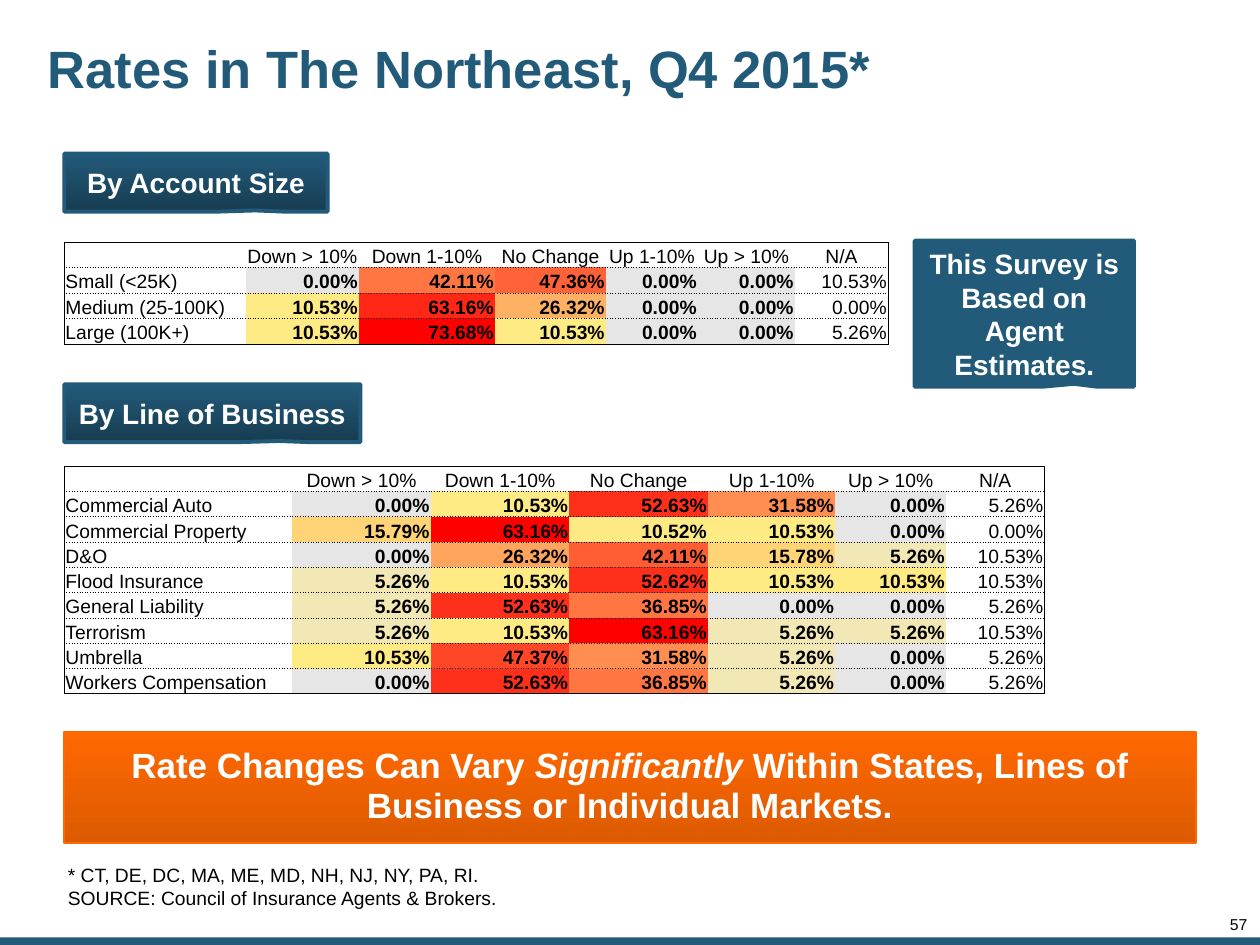
from lxml.etree import SubElement
from pptx import Presentation
from pptx.dml.color import RGBColor
from pptx.enum.shapes import MSO_SHAPE as Shape
from pptx.enum.text import MSO_ANCHOR as Anchor, PP_ALIGN as Align
from pptx.oxml.ns import qn
from pptx.util import Inches, Pt

BLUE, DARK_BLUE, ORANGE, DARK_ORANGE = "225A7A", "173C51", "FF6801", "DC5A01"
BLACK, WHITE = "000000", "FFFFFF"
HEADINGS = ["", "Down > 10%", "Down 1-10%", "No Change", "Up 1-10%", "Up > 10%", "N/A"]
SHARED_HEAT = {"0.00%": "E7E6E6", "5.26%": "F2E8B6", "10.53%": "FFEB84"}

ACCOUNT_WIDTHS = [1.44, 0.9, 1.08, 0.88, 0.73, 0.77, 0.74]
ACCOUNT_RATES = [
    ["Small (<25K)", "0.00%", "42.11%", "47.36%", "0.00%", "0.00%", "10.53%"],
    ["Medium (25-100K)", "10.53%", "63.16%", "26.32%", "0.00%", "0.00%", "0.00%"],
    ["Large (100K+)", "10.53%", "73.68%", "10.53%", "0.00%", "0.00%", "5.26%"],
]
ACCOUNT_HEAT = SHARED_HEAT | {
    "26.32%": "FFB163", "42.11%": "FF7642", "47.36%": "FF6238",
    "63.16%": "FF2816", "73.68%": "FF0000",
}

BUSINESS_WIDTHS = [1.81, 1.1, 1.1, 1.1, 1.01, 0.88, 0.78]
BUSINESS_RATES = [
    ["Commercial Auto", "0.00%", "10.53%", "52.63%", "31.58%", "0.00%", "5.26%"],
    ["Commercial Property", "15.79%", "63.16%", "10.52%", "10.53%", "0.00%", "0.00%"],
    ["D&O", "0.00%", "26.32%", "42.11%", "15.78%", "5.26%", "10.53%"],
    ["Flood Insurance", "5.26%", "10.53%", "52.62%", "10.53%", "10.53%", "10.53%"],
    ["General Liability", "5.26%", "52.63%", "36.85%", "0.00%", "0.00%", "5.26%"],
    ["Terrorism", "5.26%", "10.53%", "63.16%", "5.26%", "5.26%", "10.53%"],
    ["Umbrella", "10.53%", "47.37%", "31.58%", "5.26%", "0.00%", "5.26%"],
    ["Workers Compensation", "0.00%", "52.63%", "36.85%", "5.26%", "0.00%", "5.26%"],
]
BUSINESS_HEAT = SHARED_HEAT | {
    "10.52%": "FEEA85", "15.78%": "FFD477", "15.79%": "FFD477", "26.32%": "FFA55D",
    "31.58%": "FF8E50", "36.85%": "FF7642", "42.11%": "FF5E35", "47.37%": "FF4728",
    "52.62%": "FF301B", "52.63%": "FF301B", "63.16%": "FF0000",
}


def rgb(hex_color):
    """Turn a hex string into a colour."""
    return RGBColor.from_string(hex_color)


def set_format(target, values):
    """Set each named attribute on the target."""
    for name, value in values.items():
        setattr(target, name, value)


def write(paragraph, runs, size, color, bold=False, align=Align.LEFT, spacing=None):
    """Fill a paragraph with (text, italic) runs."""
    set_format(paragraph, {"alignment": align, "line_spacing": spacing})
    for text, italic in runs:
        run = paragraph.add_run()
        run.text = text
        set_format(run.font, {"name": "Arial", "size": Pt(size), "bold": bold, "italic": italic})
        run.font.color.rgb = rgb(color)


def set_frame(frame, insets, anchor):
    """Wrap a text frame and set its insets (left, top, right, bottom) and anchor."""
    sides = ("margin_left", "margin_top", "margin_right", "margin_bottom")
    margins = dict(zip(sides, map(Inches, insets)))
    set_format(frame, {"word_wrap": True, "vertical_anchor": anchor} | margins)


def add_label(slide, box, lines, size, color, insets=(0.1, 0.05, 0.1, 0.05),
              anchor=Anchor.TOP, **style):
    """Add a text box with one paragraph per line."""
    frame = slide.shapes.add_textbox(*map(Inches, box)).text_frame
    set_frame(frame, insets, anchor)
    for index, line in enumerate(lines):
        paragraph = frame.add_paragraph() if index else frame.paragraphs[0]
        write(paragraph, [(line, False)], size, color, **style)


def add_panel(slide, kind, box, colors, line_width=0):
    """Add a shape with a solid or top-to-bottom gradient fill."""
    panel = slide.shapes.add_shape(kind, *map(Inches, box))
    panel.shadow.inherit = False
    if len(colors) == 1:
        panel.fill.solid()
        panel.fill.fore_color.rgb = rgb(colors[0])
    else:
        panel.fill.gradient()
        panel.fill.gradient_angle = 270
        for stop, color in zip(panel.fill.gradient_stops, colors):
            stop.color.rgb = rgb(color)
    if line_width:
        panel.line.width = Pt(line_width)
        panel.line.color.rgb = rgb(colors[0])
    else:
        panel.line.fill.background()
    return panel


def add_callout(slide, box, text, colors):
    """Add a blue callout with a bold white caption."""
    callout = add_panel(slide, Shape.RECTANGULAR_CALLOUT, box, colors, 2.25)
    callout.adjustments[0], callout.adjustments[1] = 0.226, 0.48
    set_frame(callout.text_frame, (0.1, 0.1, 0.1, 0.1), Anchor.MIDDLE)
    write(callout.text_frame.paragraphs[0], [(text, False)], 16, WHITE, True, Align.CENTER)


def set_border(cell, side, dash):
    """Draw one side of a cell with the dash, or leave it bare for None."""
    line = SubElement(cell._tc.get_or_add_tcPr(), qn(f"a:ln{side}"), w=str(Pt(0.5)))
    if dash is None:
        SubElement(line, qn("a:noFill"))
        return
    SubElement(SubElement(line, qn("a:solidFill")), qn("a:srgbClr"), val=BLACK)
    SubElement(line, qn("a:prstDash"), val=dash)


def add_rate_table(slide, box, widths, rates, heat):
    """Add a heat-mapped table with a solid frame and dotted row rules."""
    rows = [HEADINGS, *rates]
    table = slide.shapes.add_table(len(rows), len(widths), *map(Inches, box)).table
    set_format(table, {"first_row": False, "horz_banding": False})
    for column, width in zip(table.columns, widths):
        column.width = Inches(width)
    last_row, last_col = len(rows) - 1, len(widths) - 1
    for r, row in enumerate(rows):
        table.rows[r].height = Inches(box[3] / len(rows))
        for c, text in enumerate(row):
            cell = table.cell(r, c)
            set_format(cell, {"vertical_anchor": Anchor.BOTTOM, "margin_left": Inches(0.01),
                              "margin_top": Inches(0.01), "margin_right": Inches(0.01),
                              "margin_bottom": 0})
            set_border(cell, "L", None if c else "solid")
            set_border(cell, "R", "solid" if c == last_col else None)
            set_border(cell, "T", "sysDot" if r else "solid")
            set_border(cell, "B", "solid" if r == last_row else "sysDot")
            heated = r > 0 and 0 < c < last_col
            if heated:
                cell.fill.solid()
                cell.fill.fore_color.rgb = rgb(heat[text])
            else:
                cell.fill.background()
            paragraph = cell.text_frame.paragraphs[0]
            if text:
                align = Align.CENTER if r == 0 else Align.RIGHT if c else Align.LEFT
                write(paragraph, [(text, False)], 11, BLACK, heated, align)
            else:
                paragraph._p.get_or_add_endParaRPr().set("sz", "1100")


def add_banner(slide):
    """Add the orange takeaway banner."""
    banner = add_panel(slide, Shape.RECTANGLE, (0.51, 5.81, 8.98, 0.88), [ORANGE, DARK_ORANGE], 1)
    set_frame(banner.text_frame, (0.1, 0.05, 0.1, 0.07), Anchor.MIDDLE)
    takeaway = [("Rate Changes Can Vary ", False), ("Significantly", True),
                (" Within States, Lines of Business or Individual Markets.", False)]
    write(banner.text_frame.paragraphs[0], takeaway, 20, WHITE, True, Align.CENTER, 0.95)


def main():
    """Build the slide and save it."""
    deck = Presentation()
    set_format(deck, {"slide_width": Inches(10), "slide_height": Inches(7.5)})
    slide = deck.slides.add_slide(deck.slide_layouts[6])
    add_panel(slide, Shape.RECTANGLE, (0, 7.44, 10, 0.06), [BLUE])
    add_label(slide, (0.33, 0.1, 8.09, 0.94), ["Rates in The Northeast, Q4 2015*"], 30, BLUE,
              (0.05, 0.05, 0.05, 0.05), Anchor.MIDDLE, bold=True, spacing=0.9)
    add_label(slide, (9.41, 7.28, 0.49, 0.13), ["57"], 9, BLACK, (0, 0, 0, 0),
              align=Align.RIGHT, spacing=0.85)
    add_label(slide, (0.44, 6.8, 7.05, 0.47),
              ["* CT, DE, DC, MA, ME, MD, NH, NJ, NY, PA, RI.",
               "SOURCE: Council of Insurance Agents & Brokers."], 11, BLACK)
    add_banner(slide)
    add_callout(slide, (0.51, 1.22, 2.09, 0.46), "By Account Size", [BLUE, DARK_BLUE])
    add_callout(slide, (0.51, 3.05, 2.35, 0.46), "By Line of Business", [BLUE, DARK_BLUE])
    add_callout(slide, (7.26, 1.91, 1.74, 1.16), "This Survey is Based on Agent Estimates.", [BLUE])
    add_rate_table(slide, (0.51, 1.92, 6.54, 0.81), ACCOUNT_WIDTHS, ACCOUNT_RATES, ACCOUNT_HEAT)
    add_rate_table(slide, (0.51, 3.7, 7.76, 1.81), BUSINESS_WIDTHS, BUSINESS_RATES, BUSINESS_HEAT)
    deck.save("out.pptx")


if __name__ == "__main__":
    main()
